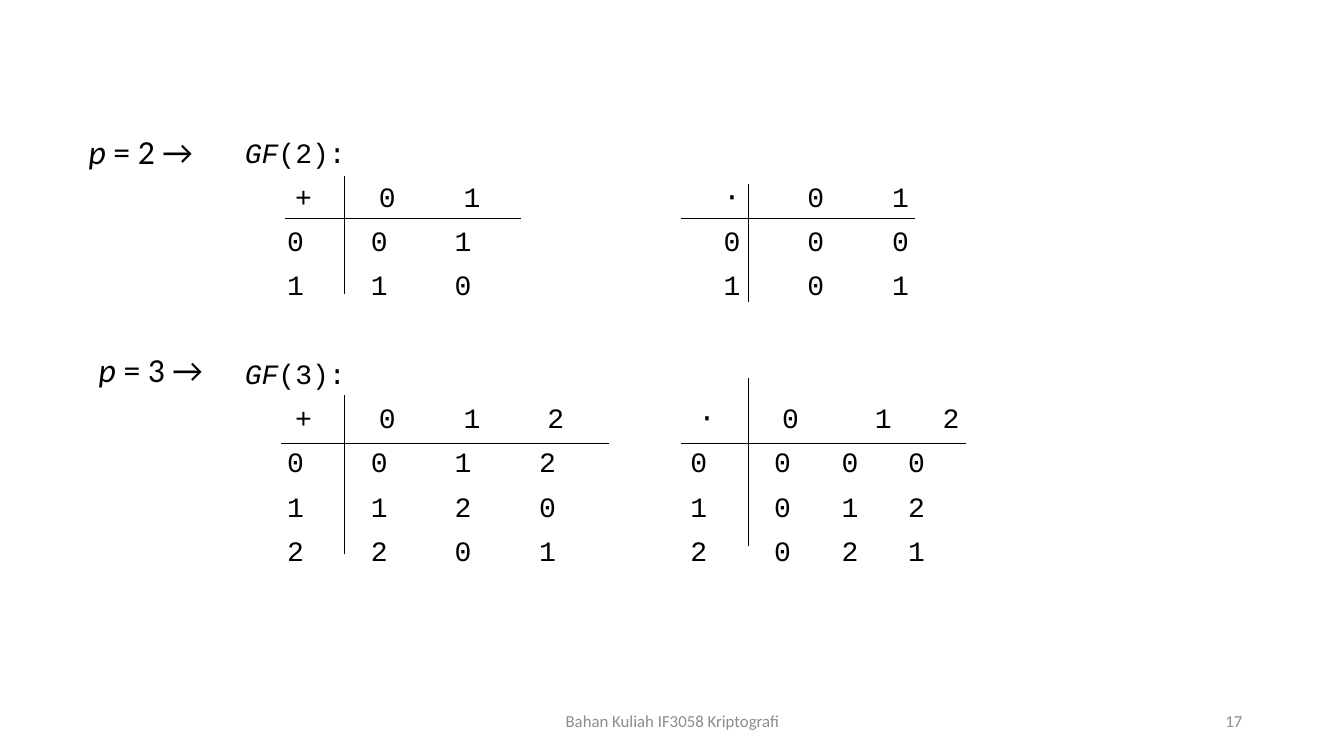
from lxml import etree
from pptx import Presentation
from pptx.dml.color import RGBColor
from pptx.enum.shapes import MSO_CONNECTOR
from pptx.enum.text import MSO_ANCHOR, PP_ALIGN
from pptx.oxml.ns import qn
from pptx.util import Inches, Pt

STRAIGHT = MSO_CONNECTOR.STRAIGHT
MIDDLE = MSO_ANCHOR.MIDDLE
LEFT, CENTER, RIGHT = PP_ALIGN.LEFT, PP_ALIGN.CENTER, PP_ALIGN.RIGHT
COLORS = {"ink": "000000", "footer": "8C8C8C"}
BODY_FONT, LABEL_FONT = "Courier New", "Calibri"

FIELDS = [
    {
        "order": 2,
        "space_before": 10,
        "head_stops": [0.5, 1.33, 2.17, 4.75, 5.58, 6.42],
        "row_stops": [0.42, 1.25, 2.08, 4.75, 5.58, 6.42],
    },
    {
        "order": 3,
        "space_before": 41.5,
        "head_stops": [0.5, 1.33, 2.17, 3, 4.5, 5.33, 6.25, 6.92],
        "row_stops": [0.42, 1.25, 2.08, 2.92, 4.42, 5.25, 5.92, 6.58],
    },
]

# left, top, width, height, and the place where the two rules cross
RULES = [
    (2.83, 1.75, 2.34, 1.17, 3.42, 2.17),
    (6.75, 1.83, 2.33, 1.17, 7.42, 2.17),
    (2.79, 3.92, 3.25, 1.58, 3.42, 4.4),
    (6.75, 3.75, 2.83, 1.67, 7.42, 4.4),
]


def style(font, name, size, color):
    """Set the name, size and colour of a font."""
    font.name = name
    font.size = Pt(size)
    font.color.rgb = RGBColor.from_string(COLORS[color])


def add_box(page, left, top, width, height, wrap=True):
    """Add a text box and return its text frame."""
    box = page.shapes.add_textbox(
        Inches(left), Inches(top), Inches(width), Inches(height)
    )
    box.text_frame.word_wrap = wrap
    return box.text_frame


def add_spans(para, italic_text, plain_text):
    """Write an italic symbol followed by upright text."""
    for text, italic in ((italic_text, True), (plain_text, False)):
        span = para.add_run()
        span.text = text
        span.font.italic = italic


def set_tab_stops(para, stops):
    """Give a paragraph left tab stops, in inches."""
    tabs = etree.SubElement(para._p.get_or_add_pPr(), qn("a:tabLst"))
    for stop in stops:
        etree.SubElement(tabs, qn("a:tab"), pos=str(Inches(stop)), algn="l")


def add_line(frame, space_before, stops=()):
    """Add one styled line to the body and return its paragraph."""
    para = frame.paragraphs[0]
    if para.runs:
        para = frame.add_paragraph()
    para.alignment = LEFT
    para.line_spacing = 0.9
    para.space_before = Pt(space_before)
    if stops:
        set_tab_stops(para, stops)
    style(para.font, BODY_FONT, 20, "ink")
    return para


def add_field(frame, order, space_before, head_stops, row_stops):
    """Write the addition and multiplication tables of GF(order)."""
    add_spans(add_line(frame, space_before), "GF", f"({order}):")
    digits = range(order)
    rows = [["+", *digits, "⋅", *digits]]
    for a in digits:
        sums = [(a + b) % order for b in digits]
        products = [a * b % order for b in digits]
        rows.append([a, *sums, a, *products])
    for index, row in enumerate(rows):
        para = add_line(frame, 10, row_stops if index else head_stops)
        para.add_run().text = "".join(f"\t{cell}" for cell in row)


def add_body(page, left, top, width, height):
    """Write the tables of every field in one box."""
    frame = add_box(page, left, top, width, height)
    for field in FIELDS:
        add_field(frame, **field)


def add_rule(page, x1, y1, x2, y2):
    """Draw a thin straight rule."""
    rule = page.shapes.add_connector(
        STRAIGHT, Inches(x1), Inches(y1), Inches(x2), Inches(y2)
    )
    rule.line.color.rgb = RGBColor.from_string(COLORS["ink"])
    rule.line.width = Pt(0.75)
    etree.SubElement(rule._element.spPr, qn("a:effectLst"))


def add_table_rules(page, left, top, width, height, cross_x, cross_y):
    """Draw the crossing rules of one operation table."""
    add_rule(page, left, cross_y, left + width, cross_y)
    add_rule(page, cross_x, top, cross_x, top + height)


def add_label(page, left, top, order):
    """Name the prime beside its field."""
    para = add_box(page, left, top, 1.35, 0.5, wrap=False).paragraphs[0]
    style(para.font, LABEL_FONT, 24, "ink")
    add_spans(para, "p", f" = {order} →")


def add_footer(page, left, width, text, alignment):
    """Place one part of the footer line."""
    frame = add_box(page, left, 6.95, width, 0.4)
    frame.vertical_anchor = MIDDLE
    para = frame.paragraphs[0]
    para.text = text
    para.alignment = alignment
    style(para.font, LABEL_FONT, 12, "footer")


def main():
    """Build and save the deck."""
    deck = Presentation()
    deck.slide_width, deck.slide_height = Inches(13.33), Inches(7.5)
    page = deck.slides.add_slide(deck.slide_layouts[6])
    add_footer(page, 4.42, 4.5, "Bahan Kuliah IF3058 Kriptografi", CENTER)
    add_footer(page, 9.42, 3, "17", RIGHT)
    add_body(page, 2.33, 1.33, 9.44, 5.48)
    for rules in RULES:
        add_table_rules(page, *rules)
    add_label(page, 0.78, 1.25, 2)
    add_label(page, 0.88, 3.41, 3)
    deck.save("out.pptx")


if __name__ == "__main__":
    main()
